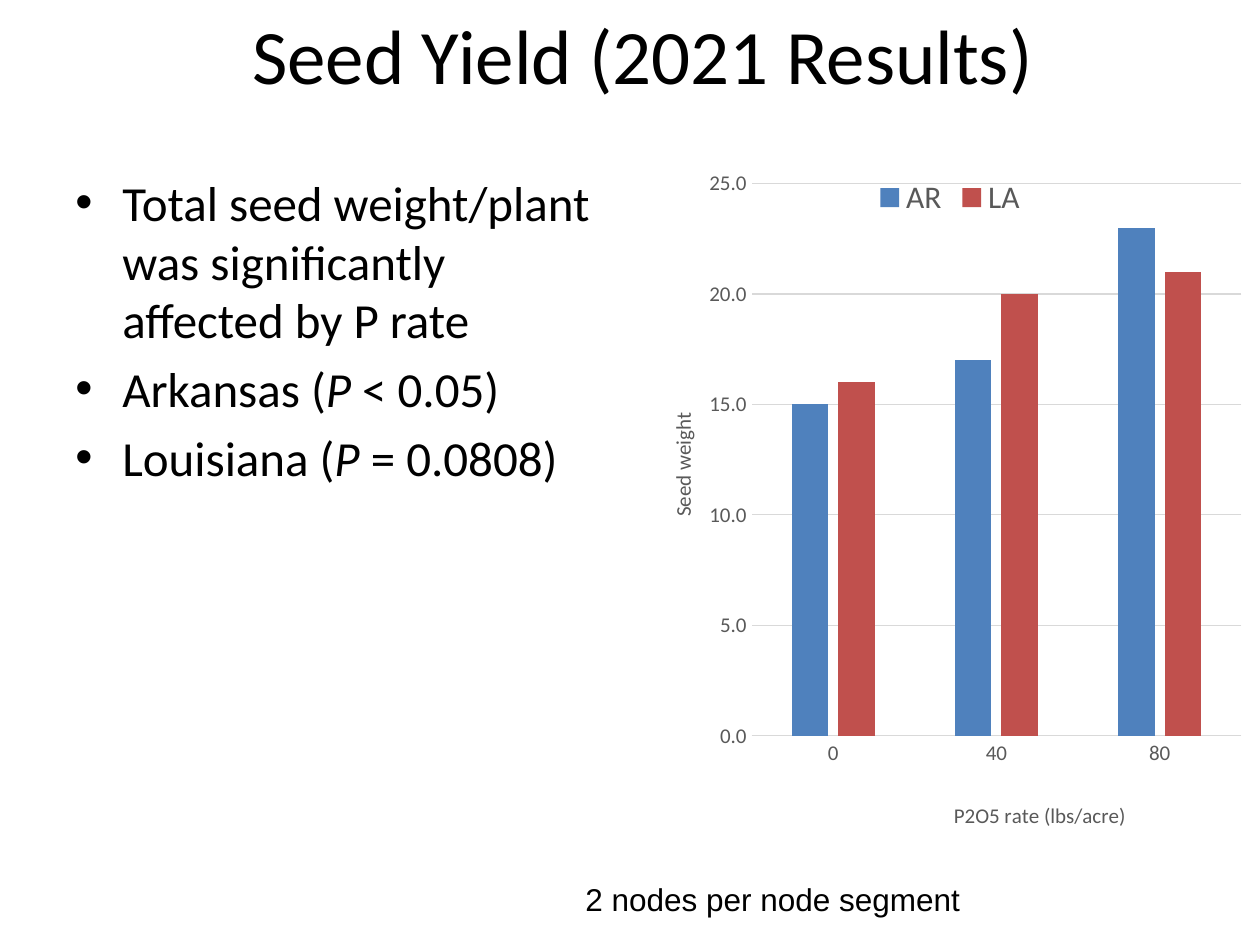
import pptx
import pptx.chart.data
import pptx.dml.color
import pptx.enum.chart
import pptx.enum.text
import pptx.oxml
import pptx.oxml.ns
import pptx.util

PX = 914400 / 126


def px(n):
    return pptx.util.Emu(round(n * PX))


def rgb(value):
    return pptx.dml.color.RGBColor.from_string(value)


def set_font(font, size, color, name="Calibri", italic=None):
    font.size = pptx.util.Pt(size)
    font.name = name
    font.color.rgb = rgb(color)
    font.bold = False
    font.italic = italic


def add_text(p, text, **fmt):
    r = p.add_run()
    r.text = text
    set_font(r.font, **fmt)


def set_layout(element, index, inner=False, **parts):
    for old in element.findall(pptx.oxml.ns.qn("c:layout")):
        element.remove(old)
    target = '<c:layoutTarget val="inner"/>' if inner else ""
    modes = "".join(f'<c:{k}Mode val="edge"/>' for k in ("x", "y"))
    values = "".join(f'<c:{k} val="{v}"/>' for k, v in parts.items())
    element.insert(index, pptx.oxml.parse_xml(
        f'<c:layout {pptx.oxml.ns.nsdecls("c")}><c:manualLayout>'
        f"{target}{modes}{values}</c:manualLayout></c:layout>"))


class Deck:
    ink = "000000"
    gray = "595959"
    rule = "D9D9D9"

    def __init__(self, width, height):
        self.prs = pptx.Presentation()
        self.prs.slide_width = px(width)
        self.prs.slide_height = px(height)
        self.s = None

    def add_slide(self):
        self.s = self.prs.slides.add_slide(self.prs.slide_layouts[5])

    def title(self, text, box):
        sp = self.s.shapes.title
        sp.left, sp.top, sp.width, sp.height = map(px, box)
        tf = sp.text_frame
        tf.auto_size = pptx.enum.text.MSO_AUTO_SIZE.NONE
        tf.vertical_anchor = pptx.enum.text.MSO_ANCHOR.MIDDLE
        p = tf.paragraphs[0]
        p.alignment = pptx.enum.text.PP_ALIGN.CENTER
        add_text(p, text, size=44, color=self.ink)

    def note(self, text, box):
        tf = self.s.shapes.add_textbox(*map(px, box)).text_frame
        tf.word_wrap = False
        add_text(tf.paragraphs[0], text, size=18, color=self.ink, name="Arial")

    def bullets(self, items, box):
        tf = self.s.shapes.add_textbox(*map(px, box)).text_frame
        tf.word_wrap = True
        for i, runs in enumerate(items):
            p = tf.add_paragraph() if i else tf.paragraphs[0]
            pPr = p._p.get_or_add_pPr()
            pPr.set("marL", str(px(47)))
            pPr.set("indent", str(-px(47)))
            for tag, attrs in (("buFont", 'typeface="Arial"'), ("buChar", 'char="•"')):
                pPr.append(pptx.oxml.parse_xml(
                    f'<a:{tag} {pptx.oxml.ns.nsdecls("a")} {attrs}/>'))
            if i:
                p.space_before = pptx.util.Pt(5.6)
            for text, italic in runs:
                add_text(p, text, size=28, color=self.ink, italic=italic)

    def axis(self, axis, title, x, y):
        axis.major_tick_mark = pptx.enum.chart.XL_TICK_MARK.NONE
        axis.minor_tick_mark = pptx.enum.chart.XL_TICK_MARK.NONE
        set_font(axis.tick_labels.font, 12, self.gray)
        tf = axis.axis_title.text_frame
        add_text(tf.paragraphs[0], title, size=12, color=self.gray)
        set_layout(axis.axis_title._element, 1, x=x, y=y)
        return tf

    def line(self, line):
        line.color.rgb = rgb(self.rule)
        line.width = pptx.util.Pt(0.75)

    def columns(self, categories, series, box):
        data = pptx.chart.data.CategoryChartData(number_format="General")
        data.categories = categories
        for name, values, _ in series:
            data.add_series(name, values)
        kind = pptx.enum.chart.XL_CHART_TYPE.COLUMN_CLUSTERED
        chart = self.s.shapes.add_chart(kind, *map(px, box), data).chart
        set_font(chart.font, 10, self.ink)
        chart.has_title = False
        chart.has_legend = True
        chart.legend.position = pptx.enum.chart.XL_LEGEND_POSITION.TOP
        chart.legend.include_in_layout = True
        set_font(chart.legend.font, 18, self.gray)

        plot = chart.plots[0]
        plot.vary_by_categories = False
        plot.gap_width = 219
        plot.overlap = -27
        for bars, (_, _, color) in zip(plot.series, series):
            bars.format.fill.solid()
            bars.format.fill.fore_color.rgb = rgb(color)

        self.axis(chart.category_axis, "P2O5 rate (lbs/acre)", 0.5, 0.93)
        self.line(chart.category_axis.format.line)
        value = chart.value_axis
        tf = self.axis(value, "Seed weight", 0.04, 0.36)
        tf._txBody.bodyPr.set("rot", "-5400000")
        tf._txBody.bodyPr.set("vert", "horz")
        value.minimum_scale, value.maximum_scale, value.major_unit = 0, 25, 5
        value.tick_labels.number_format = "#,##0.0"
        value.tick_labels.number_format_is_linked = False
        value.format.line.fill.background()
        self.line(value.major_gridlines.format.line)
        area = chart._chartSpace.chart.plotArea
        set_layout(area, 0, inner=True, x=0.18, y=0.03, w=0.79, h=0.81)


def main():
    deck = Deck(1260, 945)
    deck.add_slide()
    deck.title("Seed Yield (2021 Results)", (76, -25, 1134, 158))
    deck.columns(
        ("0", "40", "80"),
        (("AR", (15, 17, 23), "4F81BD"), ("LA", (16, 20, 21), "C0504D")),
        (640, 163, 620, 682))
    deck.note("2 nodes per node segment", (573, 874, 403, 50))
    deck.bullets((
        (("Total seed weight/plant was significantly affected by P rate", False),),
        (("Arkansas (", False), ("P ", True), ("< 0.05)", False)),
        (("Louisiana (", False), ("P ", True), ("= 0.0808)", False)),
    ), (63, 166, 557, 624))
    deck.prs.save("out.pptx")


if __name__ == "__main__":
    main()
